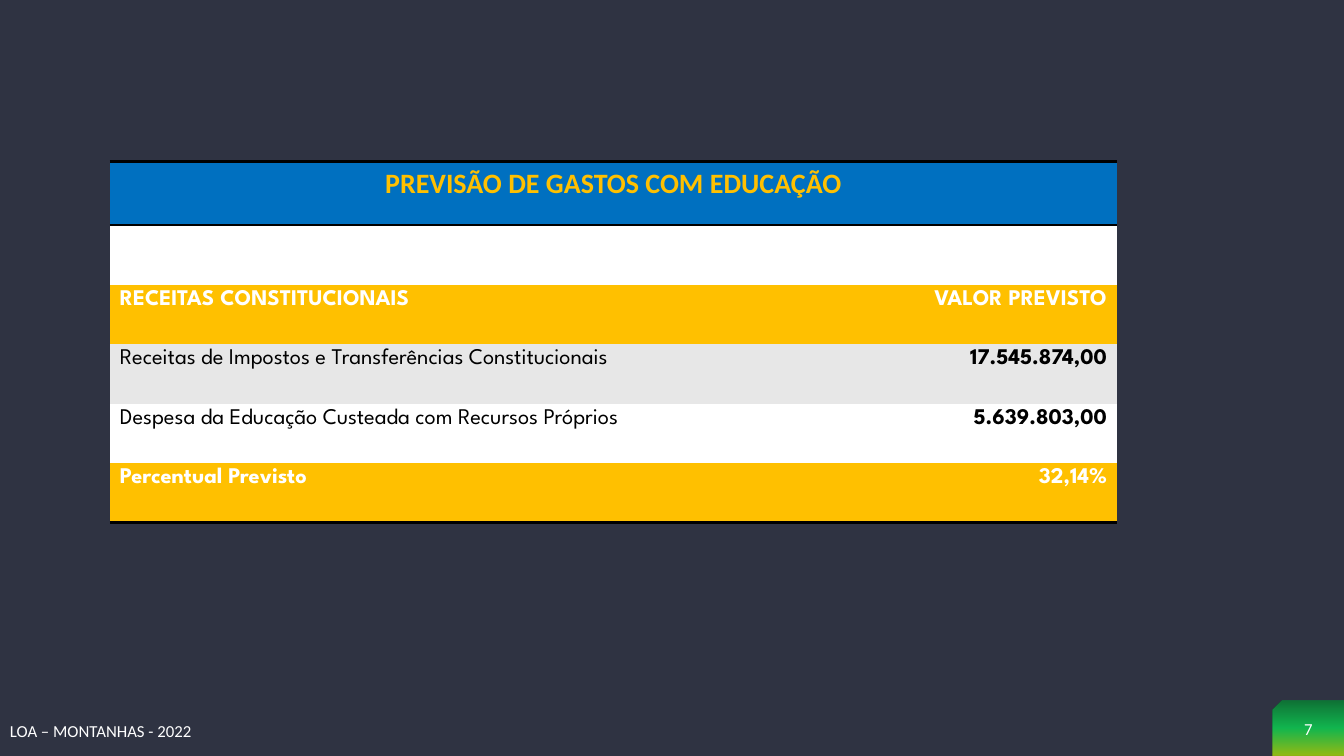
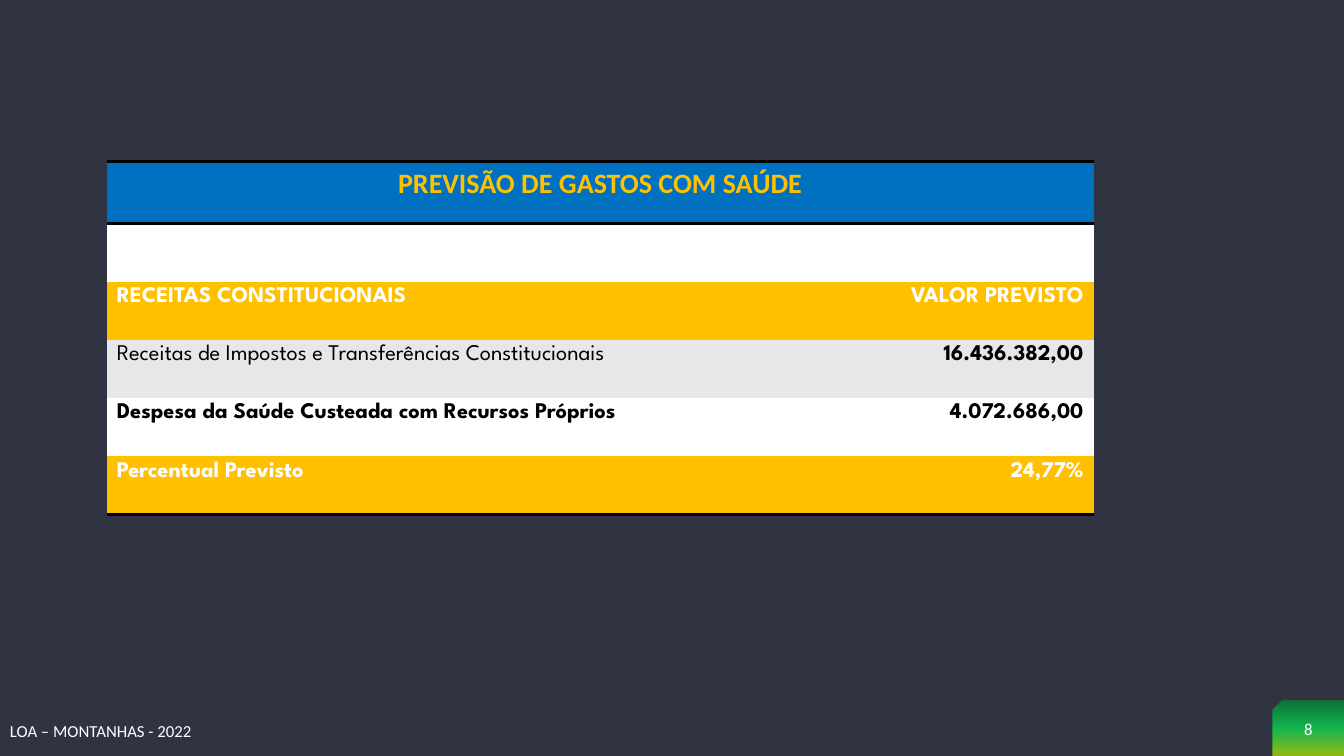
from lxml import etree
from pptx import Presentation
from pptx import util as u
from pptx.dml.color import RGBColor
from pptx.enum import shapes, text
from pptx.oxml import ns

Cm, Pt = u.Cm, u.Pt
LEFT, CENTER, RIGHT = text.PP_ALIGN.LEFT, text.PP_ALIGN.CENTER, text.PP_ALIGN.RIGHT

# Shared look
NAVY = RGBColor(0x2F, 0x33, 0x42)
BLUE = RGBColor(0x00, 0x70, 0xC0)
AMBER = RGBColor(0xFF, 0xC0, 0x00)
GREY = RGBColor(0xE7, 0xE7, 0xE7)
WHITE = RGBColor(0xFF, 0xFF, 0xFF)
BLACK = RGBColor(0x00, 0x00, 0x00)
TAB_STOPS = [(0, RGBColor(0x03, 0x8B, 0x30)),
             (50, RGBColor(0x05, 0xEE, 0x55)),
             (100, RGBColor(0xC0, 0xF4, 0x00))]
TAB_OPACITY = 70
BODY_FONT, TABLE_FONT = "Calibri", "League Spartan"
PLAIN_TABLE = "{2D5ABB26-0587-4C30-8999-92F81FD0307C}"
SLIDE_W, SLIDE_H = Cm(33.87), Cm(19.05)
FOOTER = "LOA – MONTANHAS - 2022"

# First page number, then one entry per slide: box (left, top, width, height in cm),
# title, and rows of label, value, fill, font colour, bold label
FIRST_PAGE = 7
HEADINGS = ("RECEITAS CONSTITUCIONAIS", "VALOR PREVISTO", AMBER, WHITE, True)
INCOME = "Receitas de Impostos e Transferências Constitucionais"
BUDGETS = [
    ((2.77, 4.07, 25.38, 9.1), "PREVISÃO DE GASTOS COM EDUCAÇÃO", [
        HEADINGS,
        (INCOME, "17.545.874,00", GREY, BLACK, False),
        ("Despesa da Educação Custeada com Recursos Próprios", "5.639.803,00",
         WHITE, BLACK, False),
        ("Percentual Previsto", "32,14%", AMBER, WHITE, True)]),
    ((2.69, 4.07, 24.87, 8.9), "PREVISÃO DE GASTOS COM SAÚDE", [
        HEADINGS,
        (INCOME, "16.436.382,00", GREY, BLACK, False),
        ("Despesa da Saúde Custeada com Recursos Próprios", "4.072.686,00",
         WHITE, BLACK, True),
        ("Percentual Previsto", "24,77%", AMBER, WHITE, True)]),
]


def add(parent, tag, **attrs):
    return etree.SubElement(parent, ns.qn(tag), attrs)


def write(tf, words, size, color, font=BODY_FONT, bold=False, align=LEFT):
    tf.text = words
    p = tf.paragraphs[0]
    p.alignment = align
    f = p.runs[0].font
    f.name, f.size, f.bold = font, Pt(size), bold
    f.color.rgb = color


def rule(cell, *sides):
    """Draw a black border on the given sides; call before filling the cell."""
    tcPr = cell._tc.get_or_add_tcPr()
    for side in sides:
        ln = add(tcPr, "a:ln" + side, w=str(Pt(2)))
        add(add(ln, "a:solidFill"), "a:srgbClr", val=str(BLACK))


def paint(cell, color):
    cell.fill.solid()
    cell.fill.fore_color.rgb = color


def text_box(s, left, top, width, height, words, **style):
    tf = s.shapes.add_textbox(left, top, width, height).text_frame
    tf.word_wrap = True
    write(tf, words, 12, WHITE, **style)
    return tf


def page_tab(s, left, top, width, height, number):
    """Green corner tab with the page number."""
    sp = s.shapes.add_shape(shapes.MSO_SHAPE.SNIP_1_RECTANGLE, left, top, width, height)
    sp.shadow.inherit = False
    sp.line.fill.background()
    spPr = sp._element.spPr
    spPr.find(ns.qn("a:xfrm")).set("flipH", "1")
    grad = etree.Element(ns.qn("a:gradFill"), rotWithShape="1")
    stops = add(grad, "a:gsLst")
    for pos, color in TAB_STOPS:
        clr = add(add(stops, "a:gs", pos=str(pos * 1000)), "a:srgbClr", val=str(color))
        add(clr, "a:alpha", val=str(TAB_OPACITY * 1000))
    add(grad, "a:lin", ang="5400000", scaled="0")
    spPr.find(ns.qn("a:prstGeom")).addnext(grad)
    inset = Cm(0.15)
    tf = text_box(s, left, top + inset, width, height - 2 * inset + Cm(0.05),
                  str(number), align=CENTER)
    tf.vertical_anchor = text.MSO_ANCHOR.MIDDLE


def budget_table(s, left, top, width, height, title, rows):
    """Title band, empty band, then label and value rows."""
    count = len(rows) + 2
    frame = s.shapes.add_table(count, 2, left, top, width, height)
    table = frame.table
    table.first_row = table.horz_banding = False
    table._tbl.tblPr.find(ns.qn("a:tableStyleId")).text = PLAIN_TABLE
    for col, share in zip(table.columns, (0.7, 0.3)):
        col.width = int(width * share)
    title_height = int(height * 0.176)
    for i, row in enumerate(table.rows):
        row.height = title_height if i == 0 else (height - title_height) // (count - 1)

    # Full-width bands
    for i, color in enumerate((BLUE, WHITE)):
        table.cell(i, 0).merge(table.cell(i, 1))
        for j in range(2):
            if i == 0:
                rule(table.cell(i, j), "T", "B")
            paint(table.cell(i, j), color)
    write(table.cell(0, 0).text_frame, title, 20, AMBER, bold=True, align=CENTER)

    # Label and value rows
    for i, (label, value, fill, color, bold) in enumerate(rows, 2):
        for j, (words, heavy, align) in enumerate(((label, bold, LEFT), (value, True, RIGHT))):
            cell = table.cell(i, j)
            if i == count - 1:
                rule(cell, "B")
            paint(cell, fill)
            write(cell.text_frame, words, 16, color, TABLE_FONT, heavy, align)


def budget_slide(prs, page, box, title, rows):
    s = prs.slides.add_slide(prs.slide_layouts[6])
    s.background.fill.solid()
    s.background.fill.fore_color.rgb = NAVY
    tab_w, tab_h = Cm(1.79), Cm(1.4)
    budget_table(s, *map(Cm, box), title, rows)
    page_tab(s, SLIDE_W - tab_w, SLIDE_H - tab_h, tab_w, tab_h, page)
    text_box(s, 0, Cm(18.03), SLIDE_W // 2, Cm(0.77), FOOTER)


def main():
    prs = Presentation()
    prs.slide_width, prs.slide_height = SLIDE_W, SLIDE_H
    for page, budget in enumerate(BUDGETS, FIRST_PAGE):
        budget_slide(prs, page, *budget)
    prs.save("out.pptx")


if __name__ == "__main__":
    main()
